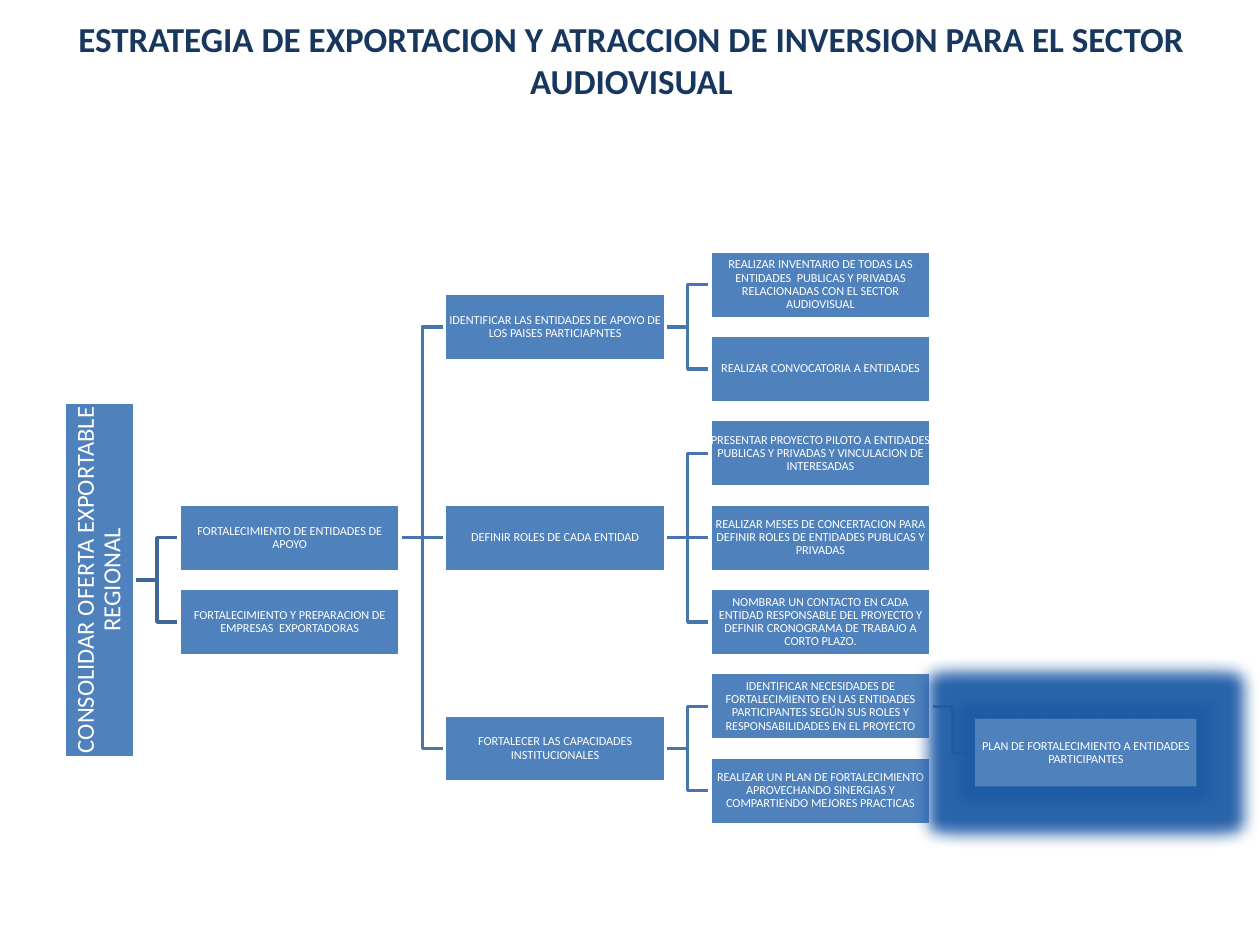
import pptx
import pptx.dml.color
import pptx.enum.shapes
import pptx.enum.text
import pptx.oxml
import pptx.oxml.ns
import pptx.util
import lxml.etree

Cm = pptx.util.Cm
Pt = pptx.util.Pt
RGBColor = pptx.dml.color.RGBColor

NAVY = RGBColor(0x17, 0x37, 0x5E)
BLUE = RGBColor(0x4F, 0x81, 0xBD)
BRANCH_BLUE = RGBColor(0x48, 0x75, 0xAC)
ROOT_BRANCH_BLUE = RGBColor(0x3F, 0x67, 0x97)
WHITE = RGBColor(0xFF, 0xFF, 0xFF)

FIRST_COLUMN, COLUMN_STEP = 3.61, 5.35
FIRST_ROW, ROW_STEP = 5.06, 1.7
BOX_WIDTH, BOX_HEIGHT = 4.46, 1.36
ROOT_CENTER, ROOT_LENGTH, ROOT_THICKNESS = 2.0, 7.16, 1.42
ROOT_ROW = 3.5

# Column, row (fractions lie between rows), row of the parent, text
BOXES = [
    (0, 3, ROOT_ROW, "FORTALECIMIENTO DE ENTIDADES DE APOYO"),
    (0, 4, ROOT_ROW, "FORTALECIMIENTO Y PREPARACION DE EMPRESAS  EXPORTADORAS"),
    (1, 0.5, 3, "IDENTIFICAR LAS ENTIDADES DE APOYO DE LOS PAISES PARTICIAPNTES"),
    (1, 3, 3, "DEFINIR ROLES DE CADA ENTIDAD"),
    (1, 5.5, 3, "FORTALECER LAS CAPACIDADES INSTITUCIONALES"),
    (2, 0, 0.5, "REALIZAR INVENTARIO DE TODAS LAS ENTIDADES  PUBLICAS Y PRIVADAS "
                "RELACIONADAS CON EL SECTOR AUDIOVISUAL"),
    (2, 1, 0.5, "REALIZAR CONVOCATORIA A ENTIDADES"),
    (2, 2, 3, "PRESENTAR PROYECTO PILOTO A ENTIDADES PUBLICAS Y PRIVADAS Y "
              "VINCULACION DE INTERESADAS"),
    (2, 3, 3, "REALIZAR MESES DE CONCERTACION PARA DEFINIR ROLES DE ENTIDADES "
              "PUBLICAS Y PRIVADAS"),
    (2, 4, 3, "NOMBRAR UN CONTACTO EN CADA ENTIDAD RESPONSABLE DEL PROYECTO Y "
              "DEFINIR CRONOGRAMA DE TRABAJO A CORTO PLAZO."),
    (2, 5, 5.5, "IDENTIFICAR NECESIDADES DE FORTALECIMIENTO EN LAS ENTIDADES "
                "PARTICIPANTES SEGÚN SUS ROLES Y RESPONSABILIDADES EN EL PROYECTO"),
    (2, 6, 5.5, "REALIZAR UN PLAN DE FORTALECIMIENTO APROVECHANDO SINERGIAS Y "
                "COMPARTIENDO MEJORES PRACTICAS"),
    (3, 5.55, 5, "PLAN DE FORTALECIMIENTO A ENTIDADES PARTICIPANTES"),
]


def write_text(shape, text, font_format, margin=None):
    frame = shape.text_frame
    frame.word_wrap = True
    frame.vertical_anchor = pptx.enum.text.MSO_ANCHOR.MIDDLE
    if margin is not None:
        for side in ("left", "top", "right", "bottom"):
            setattr(frame, "margin_" + side, margin)
    paragraph = frame.paragraphs[0]
    paragraph.alignment = pptx.enum.text.PP_ALIGN.CENTER
    run = paragraph.add_run()
    run.text = text
    color = font_format["color"]
    run.font.color.rgb = color
    for name, value in font_format.items():
        if name != "color":
            setattr(run.font, name, value)
    return paragraph


def add_box(left, top, width, height, text, size, margin):
    box = slide.shapes.add_shape(
        pptx.enum.shapes.MSO_SHAPE.RECTANGLE, Cm(left), Cm(top), Cm(width), Cm(height))
    box.shadow.inherit = False
    box.fill.solid()
    box.fill.fore_color.rgb = BLUE
    box.line.color.rgb = WHITE
    box.line.width = Pt(2)
    font_format = {"name": "Calibri", "size": Pt(size), "color": WHITE}
    write_text(box, text, font_format, margin).line_spacing = 0.9
    return box


presentation = pptx.Presentation()
presentation.slide_width = Cm(25.4)
presentation.slide_height = Cm(19.05)
slide = presentation.slides.add_slide(presentation.slide_layouts[6])

title = slide.shapes.add_textbox(Cm(1.3), Cm(0.33), Cm(22.86), Cm(1.75))
write_text(title, "ESTRATEGIA DE EXPORTACION Y ATRACCION DE INVERSION PARA EL SECTOR AUDIOVISUAL",
           {"name": "Calibri", "size": Pt(20), "bold": True, "color": NAVY})

# Branches lie behind the boxes
for column, row, parent_row, text in BOXES:
    end_x = FIRST_COLUMN + column * COLUMN_STEP
    start_x = end_x - COLUMN_STEP + BOX_WIDTH
    start_y, end_y = (FIRST_ROW + r * ROW_STEP + BOX_HEIGHT / 2 for r in (parent_row, row))
    if start_y == end_y:
        branch = slide.shapes.add_connector(
            pptx.enum.shapes.MSO_CONNECTOR.STRAIGHT,
            Cm(start_x), Cm(start_y), Cm(end_x), Cm(end_y))
        lxml.etree.SubElement(branch._element.spPr, pptx.oxml.ns.qn("a:effectLst"))
    else:
        middle_x = (start_x + end_x) / 2
        builder = slide.shapes.build_freeform(Cm(start_x), Cm(start_y))
        corners = [(middle_x, start_y), (middle_x, end_y), (end_x, end_y)]
        builder.add_line_segments([(Cm(x), Cm(y)) for x, y in corners], close=False)
        branch = builder.convert_to_shape()
        branch.shadow.inherit = False
        branch.fill.background()
    branch.line.color.rgb = BRANCH_BLUE if column else ROOT_BRANCH_BLUE
    branch.line.width = Pt(2)

root_middle = FIRST_ROW + ROOT_ROW * ROW_STEP + BOX_HEIGHT / 2
root = add_box(ROOT_CENTER - ROOT_LENGTH / 2, root_middle - ROOT_THICKNESS / 2,
               ROOT_LENGTH, ROOT_THICKNESS, "CONSOLIDAR OFERTA EXPORTABLE REGIONAL", 14, Cm(0.03))
root.rotation = 270

for column, row, parent_row, text in BOXES:
    box = add_box(FIRST_COLUMN + column * COLUMN_STEP, FIRST_ROW + row * ROW_STEP,
                  BOX_WIDTH, BOX_HEIGHT, text, 7, Cm(0.01))

# The last box is the highlighted plan
box.line.fill.background()
effects = box._element.spPr.find(pptx.oxml.ns.qn("a:effectLst"))
glow = lxml.etree.SubElement(effects, pptx.oxml.ns.qn("a:glow"), rad=str(Pt(18)))
glow_color = lxml.etree.SubElement(glow, pptx.oxml.ns.qn("a:srgbClr"), val="1F5CA6")
lxml.etree.SubElement(glow_color, pptx.oxml.ns.qn("a:alpha"), val="95000")

presentation.save("out.pptx")
